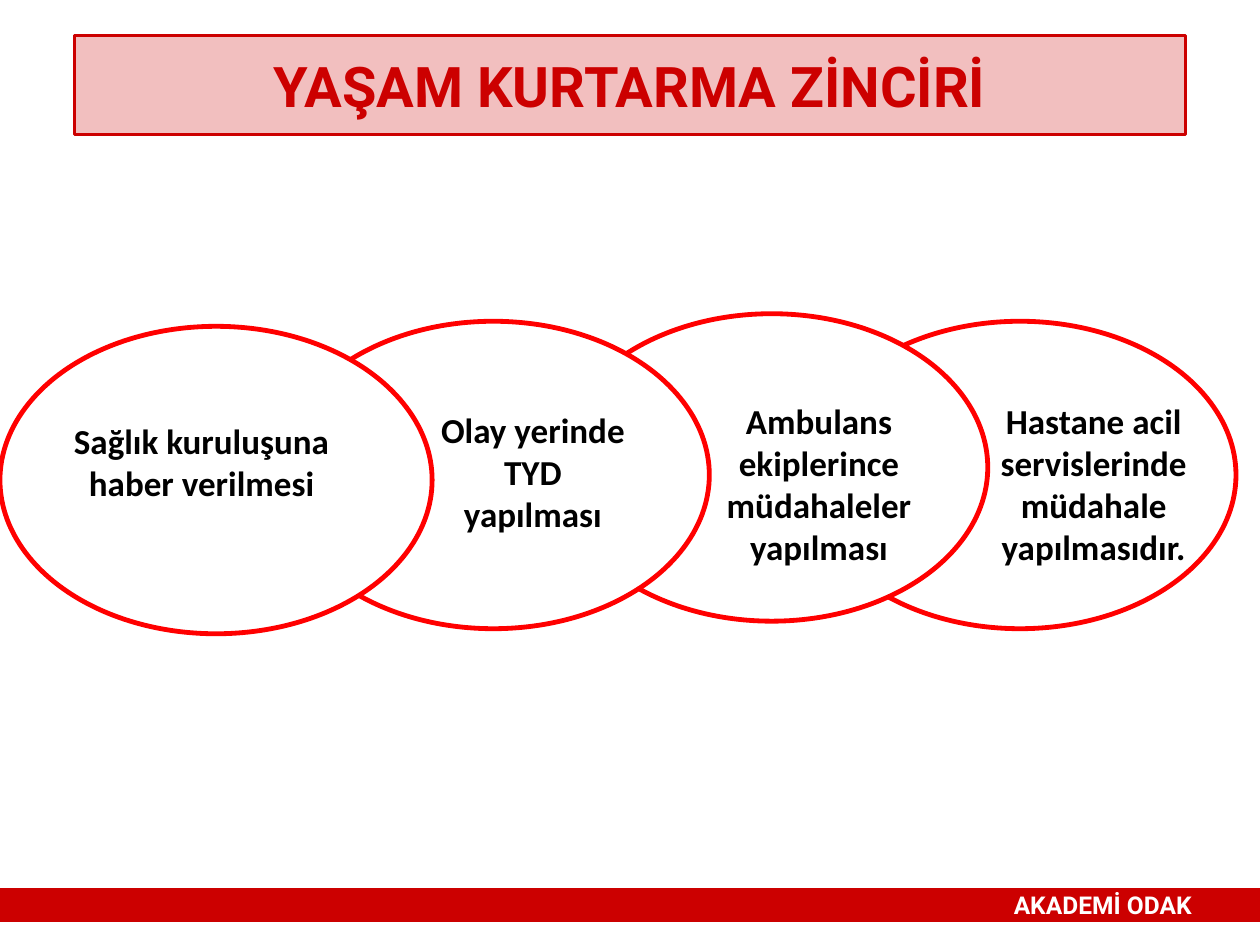
from lxml import etree
from pptx import Presentation
from pptx.dml.color import RGBColor
from pptx.enum import shapes, text
from pptx.oxml import ns
from pptx.util import Inches, Pt

W, H = 10, 7.5
RED, CRIMSON, WHITE, BLACK = "FF0000", "CC0000", "FFFFFF", "000000"
TITLE = "YAŞAM KURTARMA ZİNCİRİ"
FOOTER = "AKADEMİ ODAK"
RING = (3.43, 2.44)
# ring left, ring top, label box, label paragraphs
LINKS = [
    (0, 2.59, (0.24, 3.28, 2.72, 0.77), ["Sağlık kuruluşuna", "haber verilmesi"]),
    (2.2, 2.55, (2.91, 3.19, 2.64, 1.11), ["Olay yerinde", "TYD", "yapılması"]),
    (4.41, 2.49, (5.24, 3.12, 2.52, 1.45),
     ["Ambulans ekiplerince müdahaleler yapılması"]),
    (6.38, 2.55, (7.52, 3.12, 2.32, 1.45),
     ["Hastane acil servislerinde müdahale yapılmasıdır."]),
]


def rgb(value):
    """Turn a hex string into a colour."""
    return RGBColor.from_string(value)


def paint(sp, fill, line, width):
    """Set the fill and outline of a shape."""
    sp.fill.solid()
    sp.fill.fore_color.rgb = rgb(fill)
    sp.line.color.rgb = rgb(line)
    sp.line.width = Pt(width)


def write(sp, lines, size, font, color, align, wrap=True):
    """Fill a shape with bold paragraphs of one style."""
    tf = sp.text_frame
    tf.text = "\n".join(lines)
    tf.word_wrap = wrap
    for p in tf.paragraphs:
        p.alignment = align
        p.font.size, p.font.name, p.font.bold = Pt(size), font, True
        p.font.color.rgb = rgb(color)
    return tf


def add_shape(s, kind, box, fill, line, width):
    """Add a painted preset shape without a shadow."""
    sp = s.shapes.add_shape(kind, *map(Inches, box))
    sp.shadow.inherit = False
    paint(sp, fill, line, width)
    return sp


def add_title(s):
    """Shape the title placeholder as a translucent rounded panel."""
    sp = s.shapes.title
    sp.left, sp.top, sp.width, sp.height = map(Inches, (0.59, 0.28, 8.82, 0.79))
    geom = etree.SubElement(sp._element.spPr, ns.qn("a:prstGeom"), prst="roundRect")
    etree.SubElement(geom, ns.qn("a:avLst"))
    paint(sp, CRIMSON, CRIMSON, 1.5)
    color = sp._element.spPr.find(ns.qn("a:solidFill"))[0]
    etree.SubElement(color, ns.qn("a:alpha"), val="25000")
    tf = write(sp, [TITLE], 32, "Roboto", CRIMSON, text.PP_ALIGN.CENTER, False)
    tf.vertical_anchor = text.MSO_ANCHOR.MIDDLE
    tf.auto_size = text.MSO_AUTO_SIZE.NONE


def main():
    """Build the slide and save it."""
    prs = Presentation()
    prs.slide_width, prs.slide_height = Inches(W), Inches(H)
    s = prs.slides.add_slide(prs.slide_layouts[5])
    add_title(s)
    for left, top, _, _ in reversed(LINKS):
        add_shape(s, shapes.MSO_SHAPE.OVAL, (left, top, *RING), WHITE, RED, 2.75)
    bar = add_shape(s, shapes.MSO_SHAPE.RECTANGLE, (0, 7.06, W, 0.24),
                    CRIMSON, CRIMSON, 2.25)
    tf = write(bar, [FOOTER], 14, "Roboto", WHITE, text.PP_ALIGN.RIGHT, False)
    tf.vertical_anchor = text.MSO_ANCHOR.MIDDLE
    tf.margin_right = Inches(0.54)
    for _, _, box, lines in LINKS:
        label = s.shapes.add_textbox(*map(Inches, box))
        tf = write(label, lines, 20, "Calibri", BLACK, text.PP_ALIGN.CENTER)
        tf.auto_size = text.MSO_AUTO_SIZE.SHAPE_TO_FIT_TEXT
    prs.save("out.pptx")


if __name__ == "__main__":
    main()
